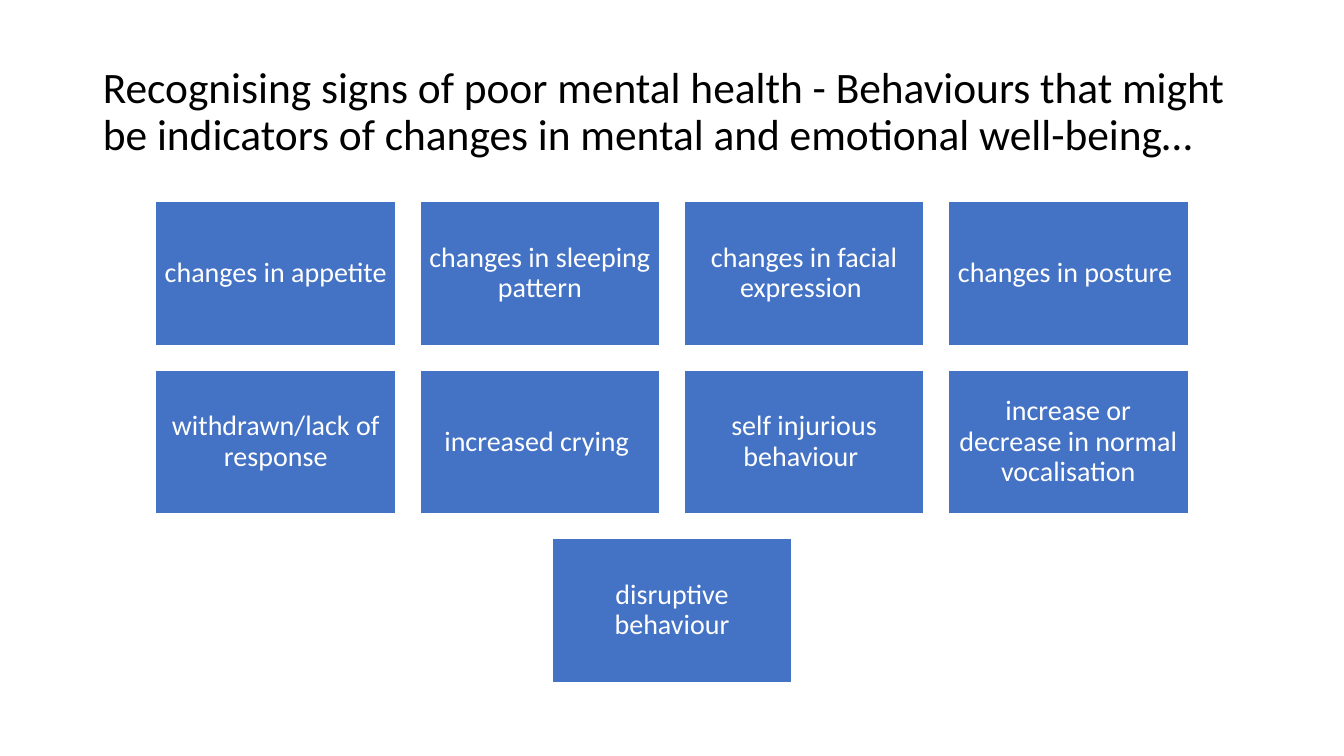
from pptx import Presentation
from pptx.dml.color import RGBColor
from pptx.enum.shapes import MSO_SHAPE as Shape
from pptx.enum.text import MSO_ANCHOR as Anchor, MSO_AUTO_SIZE as AutoSize, PP_ALIGN as Align
from pptx.util import Inches, Pt

TITLE = ("Recognising signs of poor mental health - Behaviours that might "
         "be indicators of changes in mental and emotional well-being…")
SIGN_ROWS = [
    ["changes in appetite ", "changes in sleeping pattern",
     "changes in facial expression ", "changes in posture "],
    ["withdrawn/lack of response", "increased crying ",
     "self injurious behaviour ", "increase or decrease in normal vocalisation"],
    ["disruptive behaviour"],
]

BLACK = RGBColor(0x00, 0x00, 0x00)
WHITE = RGBColor(0xFF, 0xFF, 0xFF)
BLUE = RGBColor(0x44, 0x72, 0xC4)

# Grid in inches; every row is centred on the slide
PAGE_WIDTH, PAGE_HEIGHT = 13.33, 7.5
BOX_WIDTH, BOX_HEIGHT = 2.38, 1.43
GAP = 0.24
GRID_TOP = 2

BOX_FRAME = dict.fromkeys(
    ("margin_left", "margin_right", "margin_top", "margin_bottom"), Inches(0.08))


def set_all(target, values):
    for name, value in values.items():
        setattr(target, name, value)


def write(box, text, size, color, align, frame_format):
    frame = box.text_frame
    set_all(frame, {"word_wrap": True, "auto_size": AutoSize.NONE,
                    "vertical_anchor": Anchor.MIDDLE, **frame_format})
    para = frame.paragraphs[0]
    set_all(para, {"alignment": align, "line_spacing": 0.9})
    span = para.add_run()
    span.text = text
    set_all(span.font, {"name": "Calibri", "size": Pt(size)})
    span.font.color.rgb = color


deck = Presentation()
set_all(deck, {"slide_width": Inches(PAGE_WIDTH), "slide_height": Inches(PAGE_HEIGHT)})
page = deck.slides.add_slide(deck.slide_layouts[5])

# Title
title = page.shapes.title
set_all(title, {"left": Inches(0.92), "top": Inches(0.4),
                "width": Inches(11.5), "height": Inches(1.45)})
write(title, TITLE, 31, BLACK, Align.LEFT, {})

# Boxes with the signs
for row, signs in enumerate(SIGN_ROWS):
    row_width = len(signs) * (BOX_WIDTH + GAP) - GAP
    row_left = (PAGE_WIDTH - row_width) / 2
    top = GRID_TOP + row * (BOX_HEIGHT + GAP)
    for column, sign in enumerate(signs):
        left = row_left + column * (BOX_WIDTH + GAP)
        box = page.shapes.add_shape(Shape.RECTANGLE, Inches(left), Inches(top),
                                    Inches(BOX_WIDTH), Inches(BOX_HEIGHT))
        box.shadow.inherit = False
        box.fill.solid()
        box.fill.fore_color.rgb = BLUE
        box.line.color.rgb = WHITE
        box.line.width = Pt(1)
        write(box, sign, 20, WHITE, Align.CENTER, BOX_FRAME)

deck.save("out.pptx")
